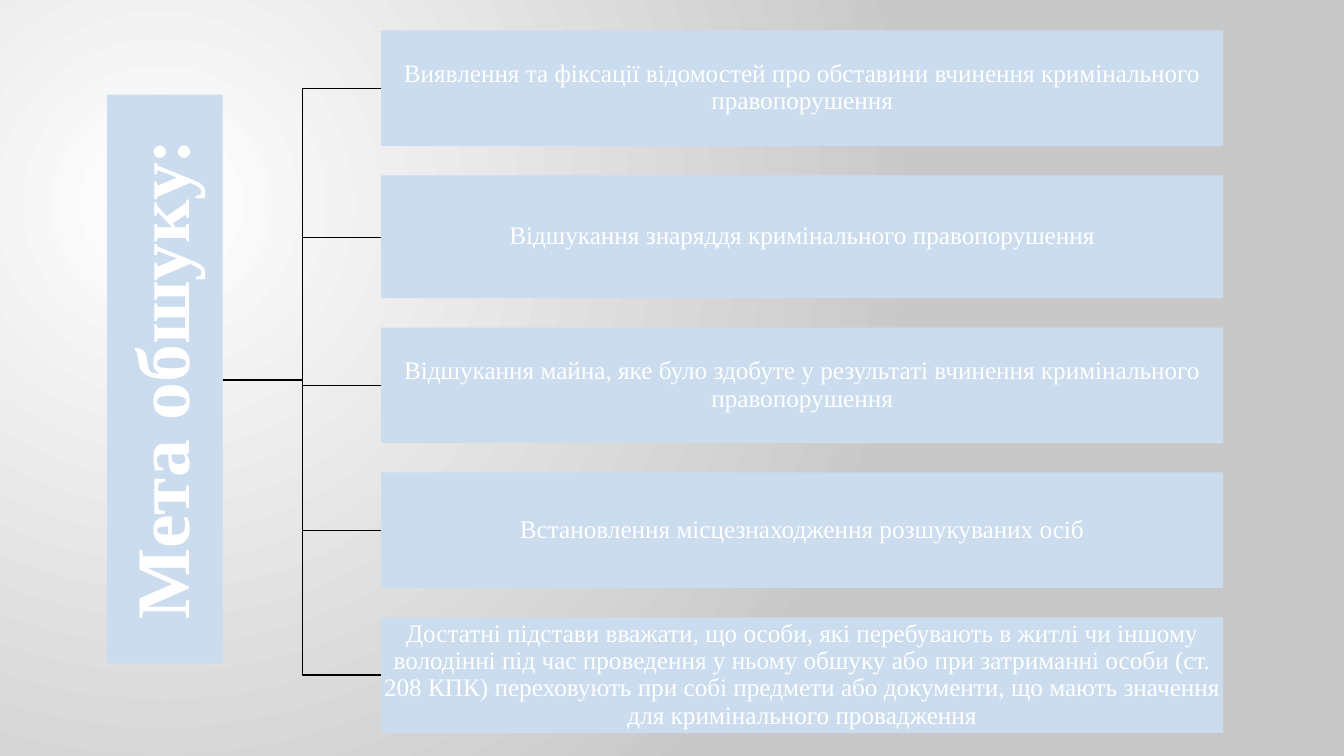
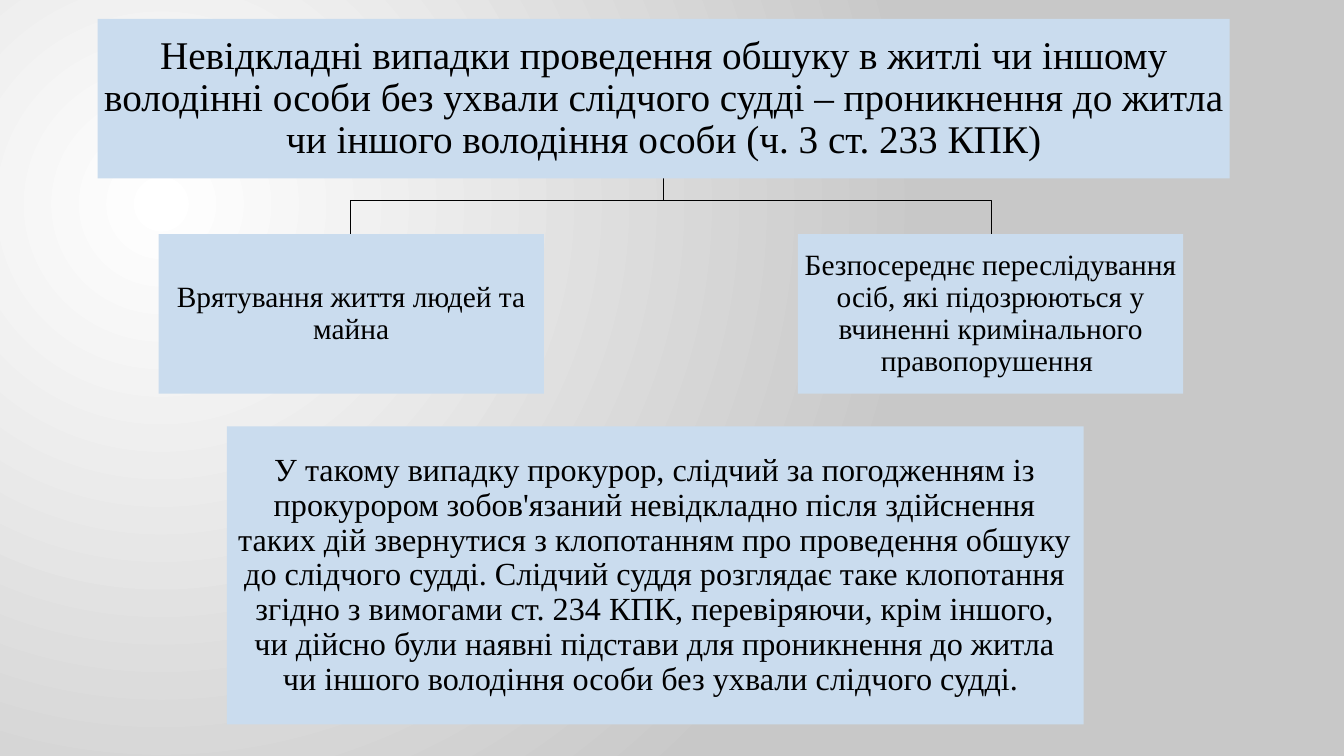
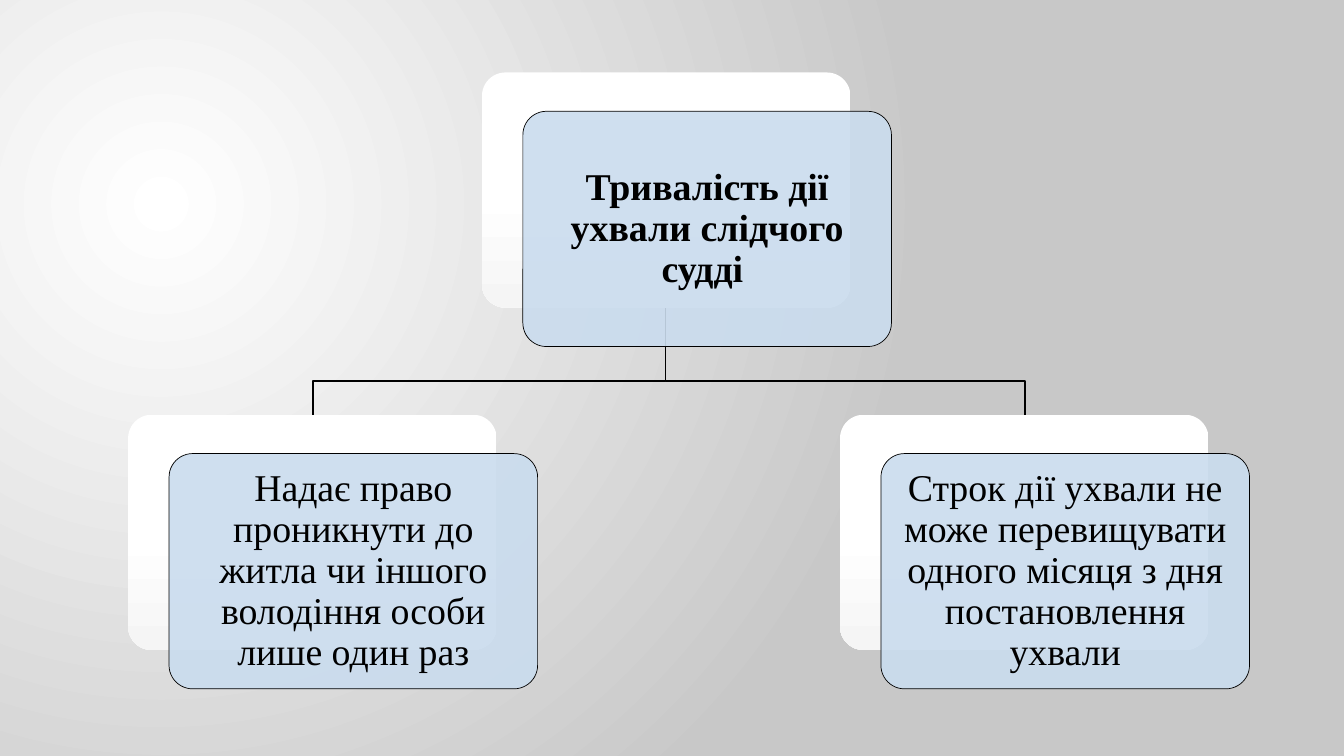
from pptx import Presentation
from pptx.dml.color import RGBColor
from pptx.enum.shapes import MSO_SHAPE
from pptx.enum.text import MSO_ANCHOR, MSO_AUTO_SIZE, PP_ALIGN
from pptx.oxml import parse_xml
from pptx.oxml.ns import nsdecls
from pptx.util import Pt

RECT, ROUND = MSO_SHAPE.RECTANGLE, MSO_SHAPE.ROUNDED_RECTANGLE
PX = 9525
WIDE, HIGH = 1280, 720
FONT = "Times New Roman"

BLUE = RGBColor(0xCA, 0xDC, 0xEE)
WHITE = RGBColor(0xFF, 0xFF, 0xFF)
BLACK = RGBColor(0, 0, 0)
GREY = RGBColor(0xC8, 0xC8, 0xC8)
PALE = RGBColor(0xF5, 0xF5, 0xF5)

FRAME = {"word_wrap": True, "auto_size": MSO_AUTO_SIZE.NONE,
         "vertical_anchor": MSO_ANCHOR.MIDDLE}
PARA = {"alignment": PP_ALIGN.CENTER, "line_spacing": 0.9}
SIDES = ("left", "top", "width", "height")
EDGES = ("left", "top", "right", "bottom")
CARD, SHIFT = (351, 224), (39, 37)

# Slide 1: heading, then (text, height, line width)
GOAL = "Мета обшуку:"
GOALS = [
    ("Виявлення та фіксації відомостей про обставини вчинення "
     "кримінального правопорушення", 110, 0.5),
    ("Відшукання знаряддя кримінального правопорушення", 117, 1),
    ("Відшукання майна, яке було здобуте у результаті вчинення "
     "кримінального правопорушення", 110, 1),
    ("Встановлення місцезнаходження розшукуваних осіб", 110, 0.5),
    ("Достатні підстави вважати, що особи, які перебувають в житлі чи іншому "
     "володінні під час проведення у ньому обшуку або при затриманні особи "
     "(ст. 208 КПК) переховують при собі предмети або документи, що мають "
     "значення для кримінального провадження", 110, 1),
]

# Slide 2: heading, (text, left), closing note
URGENT = ("Невідкладні випадки проведення обшуку в житлі чи іншому володінні "
          "особи без ухвали слідчого судді – проникнення до житла чи іншого "
          "володіння особи (ч. 3 ст. 233 КПК)")
CASES = [
    ("Врятування життя людей та майна", 151),
    ("Безпосереднє переслідування осіб, які підозрюються у вчиненні "
     "кримінального правопорушення ", 760),
]
NOTE = ("У такому випадку прокурор, слідчий за погодженням із прокурором "
        "зобов'язаний невідкладно після здійснення таких дій звернутися з "
        "клопотанням про проведення обшуку до слідчого судді. Слідчий суддя "
        "розглядає таке клопотання згідно з вимогами ст. 234 КПК, "
        "перевіряючи, крім іншого, чи дійсно були наявні підстави для "
        "проникнення до житла чи іншого володіння особи без ухвали слідчого "
        "судді. ")

# Slide 3: heading, (text, left)
TERM = "Тривалість дії ухвали слідчого судді "
RULES = [
    ("Надає право проникнути до житла чи іншого володіння особи лише один раз",
     122),
    ("Строк дії ухвали не може перевищувати одного місяця з дня постановлення "
     "ухвали", 800),
]


def assign(obj, vals):
    for key, val in vals.items():
        setattr(obj, key, val)


def blend(host, stops, tail):
    """Swap the gradient inside host for one with these stops."""
    old = host.xpath(".//a:gradFill")[0]
    marks = "".join(f'<a:gs pos="{pos * 1000}"><a:srgbClr val="{tint}"/></a:gs>'
                    for pos, tint in stops)
    new = parse_xml(f'<a:gradFill {nsdecls("a")} rotWithShape="1">'
                    f'<a:gsLst>{marks}</a:gsLst>{tail}</a:gradFill>')
    old.getparent().replace(old, new)


def place(shape, area):
    assign(shape, {side: val * PX for side, val in zip(SIDES, area)})


def write(shape, text, size, tint, pad, bold=False):
    frame = shape.text_frame
    frame.text = text
    assign(frame, FRAME)
    assign(frame, {f"margin_{edge}": pad * PX for edge in EDGES})
    para = frame.paragraphs[0]
    assign(para, PARA)
    font = para.runs[0].font
    assign(font, {"name": FONT, "size": Pt(size), "bold": bold})
    font.color.rgb = tint


def shade(shape):
    shape.fill.solid()
    shape.fill.fore_color.rgb = BLUE


def stroke(shape, width):
    shape.line.color.rgb = BLACK
    shape.line.width = Pt(width)


def add(slide, kind, area):
    shape = slide.shapes.add_shape(kind, *(val * PX for val in area))
    shape.shadow.inherit = False
    shape.line.fill.background()
    return shape


def block(slide, area, *style):
    shape = add(slide, RECT, area)
    shade(shape)
    write(shape, *style)


def head(slide, area, *style):
    """Place the title in front of all that is drawn so far."""
    title = slide.shapes.title
    place(title, area)
    write(title, *style)
    title.element.getparent().append(title.element)
    return title


def card(slide, left, top):
    """Draw a white card with a blue one over it; return the blue one."""
    back, front = (add(slide, ROUND, (left + dx, top + dy, *CARD))
                   for dx, dy in ((0, 0), SHIFT))
    for shape in (back, front):
        shape.adjustments[0] = 0.1
    back.fill.gradient()
    blend(back.element.spPr, [(0, WHITE), (50, WHITE), (100, PALE)],
          '<a:lin ang="5400000" scaled="0"/>')
    shade(front)
    tone = front.element.spPr.xpath("./a:solidFill/a:srgbClr")[0]
    tone.append(parse_xml(f'<a:alpha {nsdecls("a")} val="90000"/>'))
    stroke(front, 0.5)
    return front


def tree(slide, start, bend, ends, down=True):
    """Draw one open outline from start to each (x, y, width), via bend."""
    def turn(spot):
        return (spot[0], bend) if down else (bend, spot[1])

    for x, y, width in ends:
        pen = slide.shapes.build_freeform(*start, scale=PX)
        pen.add_line_segments([turn(start), turn((x, y)), (x, y)], close=False)
        branch = pen.convert_to_shape()
        branch.shadow.inherit = False
        branch.fill.background()
        stroke(branch, width)


def goals(slide):
    left, top, gap = 363, 29, 28
    ends, areas = [], []
    for _, high, width in GOALS:
        areas.append((left, top, 802, high))
        ends.append((left, top + high / 2, width))
        top += high + gap
    tree(slide, (212, 362), 288, ends, down=False)
    title = head(slide, (-114, 306, 542, 110), GOAL, 54, WHITE, 4, True)
    title.rotation = 270
    shade(title)
    for (text, *_), area in zip(GOALS, areas):
        block(slide, area, text, 18, WHITE, 1)


def urgent(slide):
    top, wide, high = 223, 367, 152
    tree(slide, (632, 170), 191,
         [(left + wide / 2, top, 0.5) for _, left in CASES])
    shade(head(slide, (93, 18, 1078, high), URGENT, 28, BLACK, 2))
    for text, left in CASES:
        block(slide, (left, top, wide, high), text, 21, BLACK, 1)
    block(slide, (216, 406, 816, 284), NOTE, 23, BLACK, 10)


def term(slide):
    wide, high = CARD
    left, top, low, rim = 459, 69, 395, 7
    tree(slide, (left + wide / 2, top + high), 363,
         [(side + wide / 2, low, 1) for _, side in RULES])
    card(slide, left, top)
    head(slide, (left + SHIFT[0] + rim, top + SHIFT[1] + rim,
                 wide - 2 * rim, high - 2 * rim), TERM, 27, BLACK, 10, True)
    for text, side in RULES:
        write(card(slide, side, low), text, 27, BLACK, 10)


def main():
    prs = Presentation()
    prs.slide_width, prs.slide_height = WIDE * PX, HIGH * PX
    master = prs.slide_master
    master.background.fill.gradient()
    blend(master.element.xpath(".//p:bgPr")[0], [(0, WHITE), (100, GREY)],
          '<a:path path="circle"><a:fillToRect l="50000" t="55000" '
          'r="125000" b="100000"/></a:path>')
    for draw in (goals, urgent, term):
        draw(prs.slides.add_slide(prs.slide_layouts[5]))
    prs.save("out.pptx")


if __name__ == "__main__":
    main()
